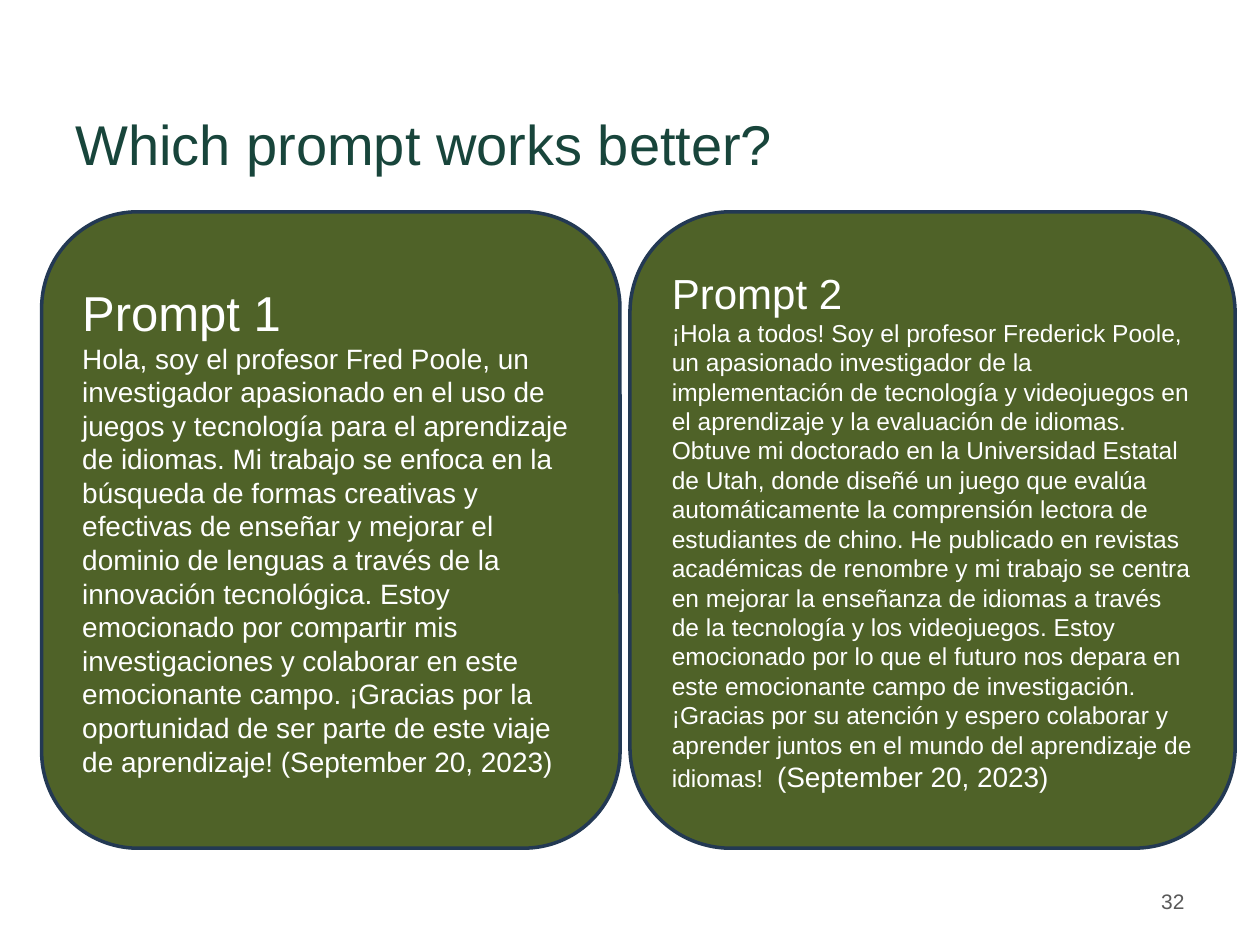
import pptx
import pptx.dml.color
import pptx.enum.shapes
import pptx.enum.text
import pptx.util

Cm = pptx.util.Cm
Pt = pptx.util.Pt
ALIGN = pptx.enum.text.PP_ALIGN
ANCHOR = pptx.enum.text.MSO_ANCHOR

FONT = "Arial"
TITLE_GREEN = "18453B"
CARD_GREEN = "4F6228"
NAVY = "233953"
WHITE = "FFFFFF"
GRAY = "595959"

CARD_TOP, CARD_HEIGHT = 4.27, 12.83

PROMPT_1 = (
    "Hola, soy el profesor Fred Poole, un investigador apasionado en el uso de juegos y "
    "tecnología para el aprendizaje de idiomas. Mi trabajo se enfoca en la búsqueda de "
    "formas creativas y efectivas de enseñar y mejorar el dominio de lenguas a través de "
    "la innovación tecnológica. Estoy emocionado por compartir mis investigaciones y "
    "colaborar en este emocionante campo. ¡Gracias por la oportunidad de ser parte de este "
    "viaje de aprendizaje! (September 20, 2023)"
)
PROMPT_2 = (
    "¡Hola a todos! Soy el profesor Frederick Poole, un apasionado investigador de la "
    "implementación de tecnología y videojuegos en el aprendizaje y la evaluación de "
    "idiomas. Obtuve mi doctorado en la Universidad Estatal de Utah, donde diseñé un juego "
    "que evalúa automáticamente la comprensión lectora de estudiantes de chino. He "
    "publicado en revistas académicas de renombre y mi trabajo se centra en mejorar la "
    "enseñanza de idiomas a través de la tecnología y los videojuegos. Estoy emocionado "
    "por lo que el futuro nos depara en este emocionante campo de investigación. ¡Gracias "
    "por su atención y espero colaborar y aprender juntos en el mundo del aprendizaje de "
    "idiomas!  "
)


def color(hex_text):
    return pptx.dml.color.RGBColor.from_string(hex_text)


def add_run(paragraph, text, *, size, fill=WHITE, align=ALIGN.LEFT):
    paragraph.alignment = align
    run = paragraph.add_run()
    run.text = text
    run.font.name = FONT
    run.font.size = Pt(size)
    run.font.color.rgb = color(fill)


def add_label(slide, text, left, top, width, height, *, anchor=ANCHOR.TOP,
              top_inset=0.13, **text_format):
    label = slide.shapes.add_textbox(Cm(left), Cm(top), Cm(width), Cm(height))
    frame = label.text_frame
    frame.word_wrap = True
    frame.vertical_anchor = anchor
    frame.margin_top = Cm(top_inset)
    add_run(frame.paragraphs[0], text, **text_format)


def add_prompt_card(slide, left, width, heading, heading_size, body_runs):
    """Add a rounded card; body_runs holds (text, size) pairs."""
    card = slide.shapes.add_shape(
        pptx.enum.shapes.MSO_SHAPE.ROUNDED_RECTANGLE,
        Cm(left), Cm(CARD_TOP), Cm(width), Cm(CARD_HEIGHT))
    card.shadow.inherit = False
    card.fill.solid()
    card.fill.fore_color.rgb = color(CARD_GREEN)
    card.line.color.rgb = color(NAVY)
    card.line.width = Pt(2)
    frame = card.text_frame
    frame.word_wrap = True
    frame.vertical_anchor = ANCHOR.MIDDLE
    add_run(frame.paragraphs[0], heading, size=heading_size)
    body = frame.add_paragraph()
    for text, size in body_runs:
        add_run(body, text, size=size)


def main():
    presentation = pptx.Presentation()
    presentation.slide_width = Cm(25.4)
    presentation.slide_height = Cm(19.05)
    slide = presentation.slides.add_slide(presentation.slide_layouts[6])

    add_label(slide, "Which prompt works better?", 1.27, 1.98, 22.86, 2.29,
              top_inset=0.23, size=32, fill=TITLE_GREEN)
    add_label(slide, "32", 18.21, 17.65, 5.92, 1.02, anchor=ANCHOR.MIDDLE,
              size=12, fill=GRAY, align=ALIGN.RIGHT)
    add_prompt_card(slide, 12.7, 12.2, "Prompt 2", 24,
                    [(PROMPT_2, 14), ("(September 20, 2023)", 16)])
    add_prompt_card(slide, 0.84, 11.66, "Prompt 1", 28, [(PROMPT_1, 16)])

    presentation.save("out.pptx")


if __name__ == "__main__":
    main()
